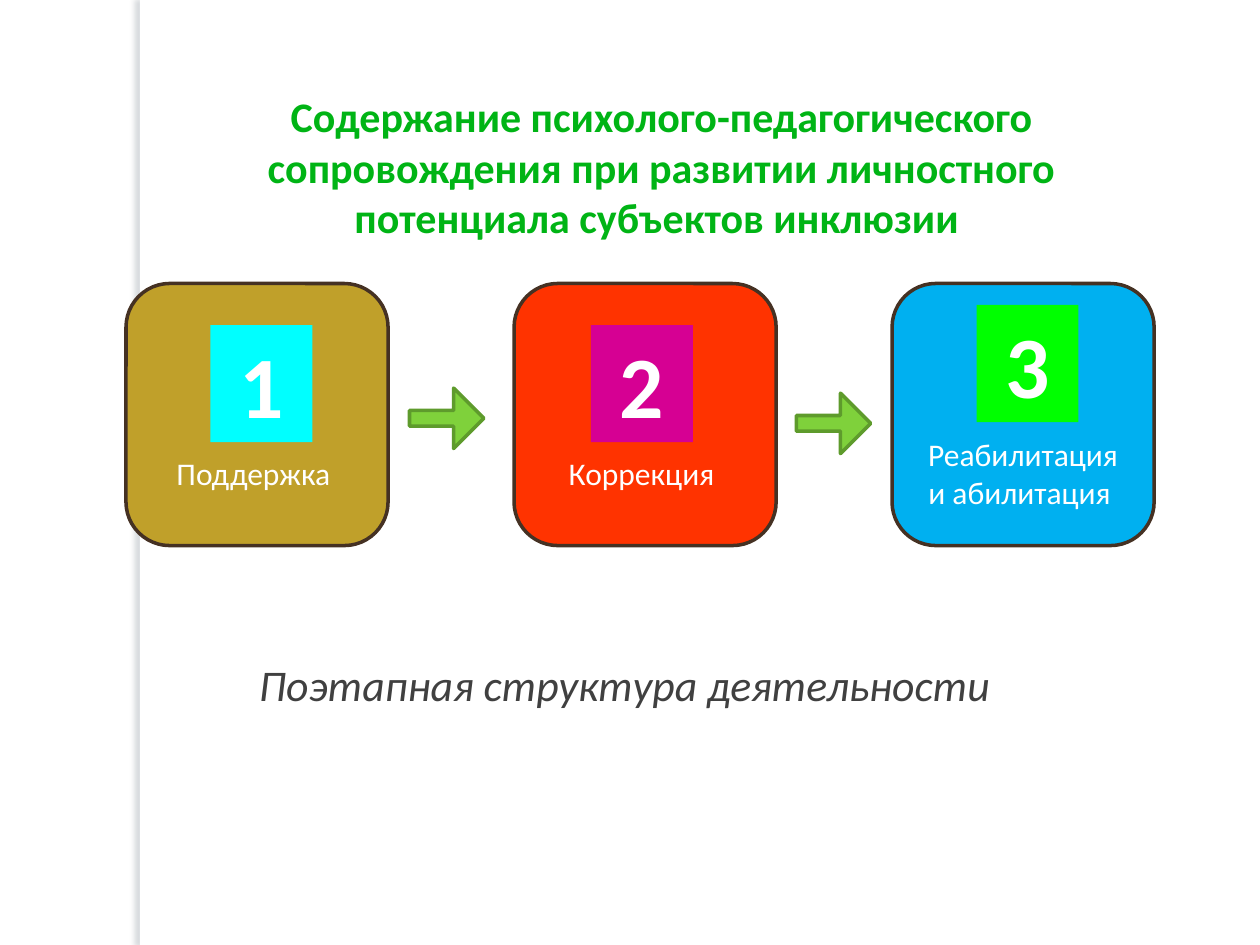
from dataclasses import dataclass

from lxml import etree
from pptx import Presentation
from pptx.dml.color import RGBColor
from pptx.enum.shapes import MSO_SHAPE
from pptx.enum.text import MSO_ANCHOR, PP_ALIGN
from pptx.oxml.ns import qn
from pptx.util import Inches, Pt

RECT = MSO_SHAPE.RECTANGLE
ROUNDED = MSO_SHAPE.ROUNDED_RECTANGLE
ARROW = MSO_SHAPE.RIGHT_ARROW
TOP, MIDDLE = MSO_ANCHOR.TOP, MSO_ANCHOR.MIDDLE
CENTER = PP_ALIGN.CENTER
TITLE_ONLY = 5


@dataclass(frozen=True)
class Theme:
    font: str = "Calibri"
    white: str = "FFFFFF"
    heading: str = "00B415"
    caption: str = "404040"
    card_line: str = "453123"
    arrow_fill: str = "7FD13B"
    arrow_line: str = "5E9B2C"
    rail_shadow: str = "697580"
    heading_size: int = 24
    label_size: int = 18
    number_size: int = 50
    caption_size: int = 25
    line_width: int = 2


def write_text(frame, text, *, font, size, color, bold=False, italic=False,
               anchor=TOP, top_inset=0.05):
    frame.word_wrap = True
    frame.vertical_anchor = anchor
    frame.margin_left = frame.margin_right = Inches(0.1)
    frame.margin_top, frame.margin_bottom = Inches(top_inset), Inches(0.05)
    paragraph = frame.paragraphs[0]
    paragraph.alignment = CENTER
    run = paragraph.add_run()
    run.text = text
    run.font.name, run.font.size = font, Pt(size)
    run.font.bold, run.font.italic = bold, italic
    run.font.color.rgb = RGBColor.from_string(color)


class StageSlide:
    CARD_SIZE = 2.08
    CARD_TOP = 2.25

    def __init__(self, slide, theme):
        self.slide = slide
        self.theme = theme

    def _shape(self, kind, left, top, width, height, fill, line=None):
        shape = self.slide.shapes.add_shape(
            kind, Inches(left), Inches(top), Inches(width), Inches(height))
        shape.shadow.inherit = False
        shape.fill.solid()
        shape.fill.fore_color.rgb = RGBColor.from_string(fill)
        if line:
            shape.line.color.rgb = RGBColor.from_string(line)
            shape.line.width = Pt(self.theme.line_width)
        else:
            shape.line.fill.background()
        return shape

    def rail(self, left, width, height):
        """White strip that casts a soft shadow to the left."""
        strip = self._shape(RECT, left, 0, width, height, self.theme.white)
        effects = strip._element.spPr.find(qn("a:effectLst"))
        shadow = etree.SubElement(
            effects, qn("a:outerShdw"), blurRad=str(Pt(3)), dist=str(Pt(3)),
            dir=str(180 * 60000), algn="ctr", rotWithShape="0")
        color = etree.SubElement(shadow, qn("a:srgbClr"), val=self.theme.rail_shadow)
        etree.SubElement(color, qn("a:alpha"), val="25000")

    def heading(self, text, left, top, width, height):
        title = self.slide.shapes.title
        title.left, title.top = Inches(left), Inches(top)
        title.width, title.height = Inches(width), Inches(height)
        write_text(title.text_frame, text, font=self.theme.font,
                   size=self.theme.heading_size, color=self.theme.heading, bold=True)

    def card(self, label, left, fill):
        card = self._shape(ROUNDED, left, self.CARD_TOP, self.CARD_SIZE,
                           self.CARD_SIZE, fill, self.theme.card_line)
        # The top inset keeps the label below the number
        write_text(card.text_frame, label, font=self.theme.font,
                   size=self.theme.label_size, color=self.theme.white,
                   anchor=MIDDLE, top_inset=0.98)

    def arrow(self, left, top):
        arrow = self._shape(ARROW, left, top, 0.59, 0.48,
                            self.theme.arrow_fill, self.theme.arrow_line)
        arrow.adjustments[0] = 0.26

    def number(self, text, left, top, fill):
        tile = self._shape(RECT, left, top, 0.81, 0.93, fill)
        write_text(tile.text_frame, text, font=self.theme.font,
                   size=self.theme.number_size, color=self.theme.white, bold=True)

    def caption(self, text, left, top, width, height):
        box = self.slide.shapes.add_textbox(
            Inches(left), Inches(top), Inches(width), Inches(height))
        write_text(box.text_frame, text, font=self.theme.font,
                   size=self.theme.caption_size, color=self.theme.caption, italic=True)


def main():
    deck = Presentation()
    deck.slide_width, deck.slide_height = Inches(10), Inches(7.5)
    slide = deck.slides.add_slide(deck.slide_layouts[TITLE_ONLY])
    page = StageSlide(slide, Theme())

    # Side rail and heading
    page.rail(1.11, 0.08, 7.5)
    page.heading("Содержание психолого-педагогического сопровождения при развитии "
                 "личностного потенциала субъектов инклюзии ", 1.75, 0.67, 7, 1.31)

    # Stages: label, card left, card fill, number left, number top, number fill
    stages = [
        ("Поддержка ", 1, "C0A02A", 1.67, 2.58, "00FFFF"),
        ("Коррекция ", 4.08, "FF3300", 4.69, 2.58, "D60093"),
        ("Реабилитация и абилитация ", 7.08, "00B0F0", 7.75, 2.42, "00FF00"),
    ]
    for position, stage in enumerate(stages, start=1):
        label, card_left, card_fill, number_left, number_top, number_fill = stage
        page.card(label, card_left, card_fill)
        page.number(str(position), number_left, number_top, number_fill)

    # Arrows between the stages
    for left, top in [(3.25, 3.08), (6.32, 3.12)]:
        page.arrow(left, top)

    # Caption
    page.caption("Поэтапная структура деятельности", 1.33, 5.17, 7.25, 0.52)

    deck.save("out.pptx")


if __name__ == "__main__":
    main()
